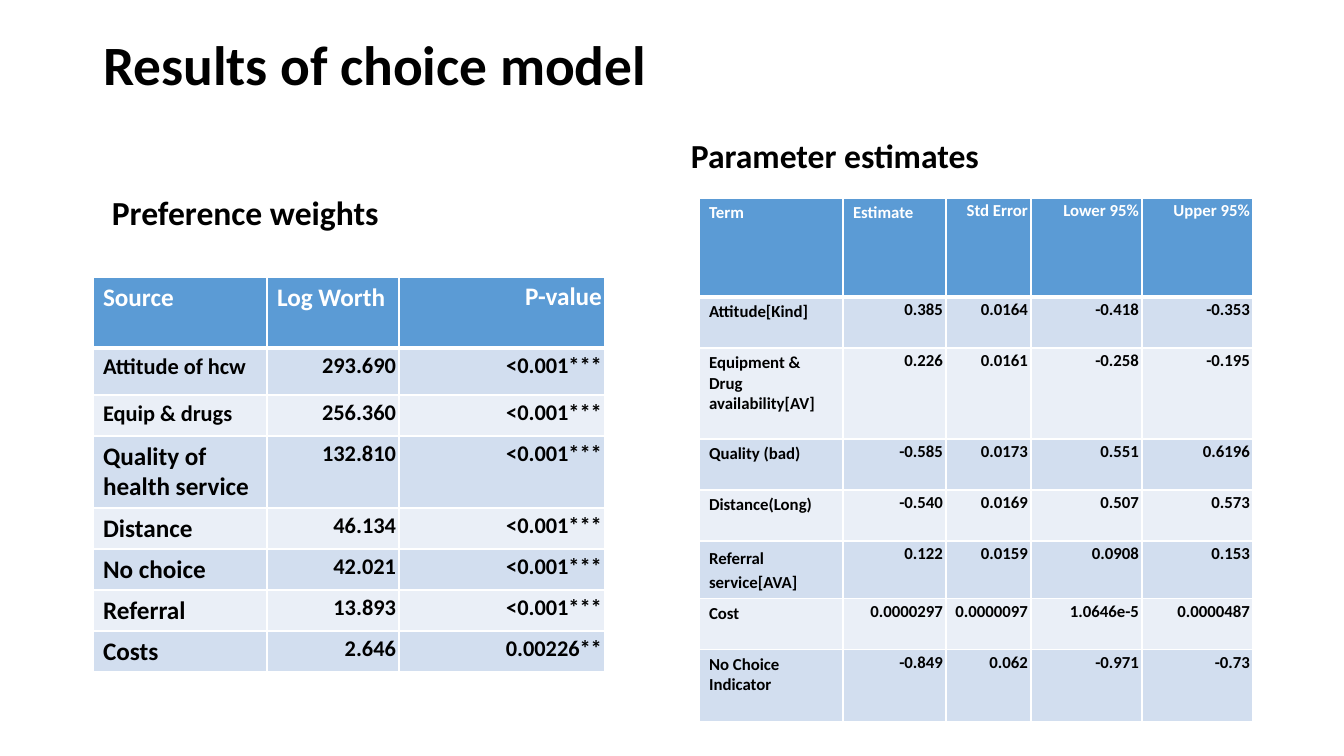
from dataclasses import dataclass

from lxml import etree
from pptx import Presentation
from pptx.dml.color import RGBColor
from pptx.enum.text import MSO_ANCHOR, MSO_AUTO_SIZE, PP_ALIGN
from pptx.oxml.ns import qn
from pptx.util import Emu, Pt

LEFT, RIGHT = PP_ALIGN.LEFT, PP_ALIGN.RIGHT
MIDDLE, BOTTOM = MSO_ANCHOR.MIDDLE, MSO_ANCHOR.BOTTOM
NO_AUTOFIT = MSO_AUTO_SIZE.NONE
TITLE_ONLY = 5
EMU_PER_PX = 914400 / 100.8


@dataclass(frozen=True)
class Theme:
    font: str = "Calibri"
    ink: str = "000000"
    white: str = "FFFFFF"
    header: str = "5B9BD5"
    bands: tuple = ("D2DEEF", "EAEFF7")
    title_size: float = 39.6
    heading_size: int = 24
    large: int = 18
    medium: int = 16
    small: int = 12
    thin: int = 1
    thick: int = 3


THEME = Theme()

WEIGHTS = [
    ("Source", "Log Worth", "P-value"),
    ("Attitude of hcw", "293.690", "<0.001***"),
    ("Equip & drugs", "256.360", "<0.001***"),
    ("Quality of health service", "132.810", "<0.001***"),
    ("Distance", "46.134", "<0.001***"),
    ("No choice", "42.021", "<0.001***"),
    ("Referral", "13.893", "<0.001***"),
    ("Costs", "2.646", "0.00226**"),
]
WEIGHT_LABEL_SIZES = [THEME.large] + [THEME.medium] * 2 + [THEME.large] * 5

ESTIMATES = [
    ("Term", "Estimate", "Std Error", "Lower 95%", "Upper 95%"),
    ("Attitude[Kind]", "0.385", "0.0164", "-0.418", "-0.353"),
    ("Equipment & Drug availability[AV]", "0.226", "0.0161", "-0.258", "-0.195"),
    ("Quality (bad)", "-0.585", "0.0173", "0.551", "0.6196"),
    ("Distance(Long)", "-0.540", "0.0169", "0.507", "0.573"),
    ("Referral service[AVA]", "0.122", "0.0159", "0.0908", "0.153"),
    ("Cost", "0.0000297", "0.0000097", "1.0646e-5", "0.0000487"),
    ("No Choice Indicator", "-0.849", "0.062", "-0.971", "-0.73"),
]


def px(length):
    return Emu(round(length * EMU_PER_PX))


def format_paragraph(paragraph, size, color, align=LEFT, spacing=1.0):
    paragraph.alignment = align
    paragraph.line_spacing = spacing
    for run in paragraph.runs:
        run.font.name = THEME.font
        run.font.size = Pt(size)
        run.font.bold = True
        run.font.color.rgb = RGBColor.from_string(color)


def fill_text(shape, text, size, anchor):
    frame = shape.text_frame
    frame.text = text
    frame.word_wrap = True
    frame.auto_size = NO_AUTOFIT
    frame.vertical_anchor = anchor
    format_paragraph(frame.paragraphs[0], size, THEME.ink, spacing=0.9)


def set_title(slide, text, left, top, width, height):
    title = slide.shapes.title
    title.left, title.top = px(left), px(top)
    title.width, title.height = px(width), px(height)
    fill_text(title, text, THEME.title_size, MIDDLE)


def add_heading(slide, text, left, top, width, height):
    box = slide.shapes.add_textbox(px(left), px(top), px(width), px(height))
    fill_text(box, text, THEME.heading_size, BOTTOM)
    box.text_frame.paragraphs[0].space_before = Pt(10)


def set_borders(cell, top, bottom):
    properties = cell._tc.get_or_add_tcPr()
    widths = {"a:lnL": THEME.thin, "a:lnR": THEME.thin, "a:lnT": top, "a:lnB": bottom}
    for tag, width in widths.items():
        line = etree.SubElement(properties, qn(tag), w=str(Pt(width)))
        fill = etree.SubElement(line, qn("a:solidFill"))
        etree.SubElement(fill, qn("a:srgbClr"), val=THEME.white)


def format_cell(cell, text, size, row, is_number):
    # The heavy rule runs between the header and the first body row
    set_borders(
        cell,
        top=THEME.thick if row == 1 else THEME.thin,
        bottom=THEME.thick if row == 0 else THEME.thin,
    )
    background = THEME.bands[(row - 1) % 2] if row else THEME.header
    cell.fill.solid()
    cell.fill.fore_color.rgb = RGBColor.from_string(background)
    if is_number:
        cell.margin_left = cell.margin_right = px(3)
        cell.margin_top = cell.margin_bottom = 0
    cell.text_frame.text = text
    format_paragraph(
        cell.text_frame.paragraphs[0],
        size,
        THEME.ink if row else THEME.white,
        RIGHT if is_number else LEFT,
        1.15 if is_number else 1.0,
    )


def add_results_table(slide, data, left, top, widths, heights, label_sizes, number_size):
    frame = slide.shapes.add_table(
        len(data), len(widths), px(left), px(top), px(sum(widths)), px(sum(heights))
    )
    table = frame.table
    for column, width in zip(table.columns, widths):
        column.width = px(width)
    for table_row, height in zip(table.rows, heights):
        table_row.height = px(height)
    for row, values in enumerate(data):
        for column, text in enumerate(values):
            # The first two header cells are set like labels
            is_number = column > (0 if row else 1)
            size = label_sizes[row] if row == 0 or column == 0 else number_size
            format_cell(table.cell(row, column), text, size, row, is_number)
    return table


def main():
    presentation = Presentation()
    presentation.slide_width, presentation.slide_height = px(1344), px(756)
    slide = presentation.slides.add_slide(presentation.slide_layouts[TITLE_ONLY])
    set_title(slide, "Results of choice model", 93, 40, 1122, 56)

    # Preference weights
    add_heading(slide, "Preference weights", 102, 147, 569, 91)
    add_results_table(
        slide, WEIGHTS, 93, 277,
        widths=[174, 132, 206],
        heights=[71, 47, 41, 72, 41, 41, 41, 41],
        label_sizes=WEIGHT_LABEL_SIZES,
        number_size=THEME.medium,
    )

    # Parameter estimates
    add_heading(slide, "Parameter estimates", 681, 110, 571, 71)
    estimates = add_results_table(
        slide, ESTIMATES, 699, 198,
        widths=[144, 103, 85, 111, 111],
        heights=[99, 51, 91, 51, 51, 57, 51, 72],
        label_sizes=[THEME.small] * len(ESTIMATES),
        number_size=THEME.small,
    )
    referral_label = estimates.cell(5, 0).text_frame.paragraphs[0]
    referral_label.line_spacing = 1.15

    presentation.save("out.pptx")


if __name__ == "__main__":
    main()
